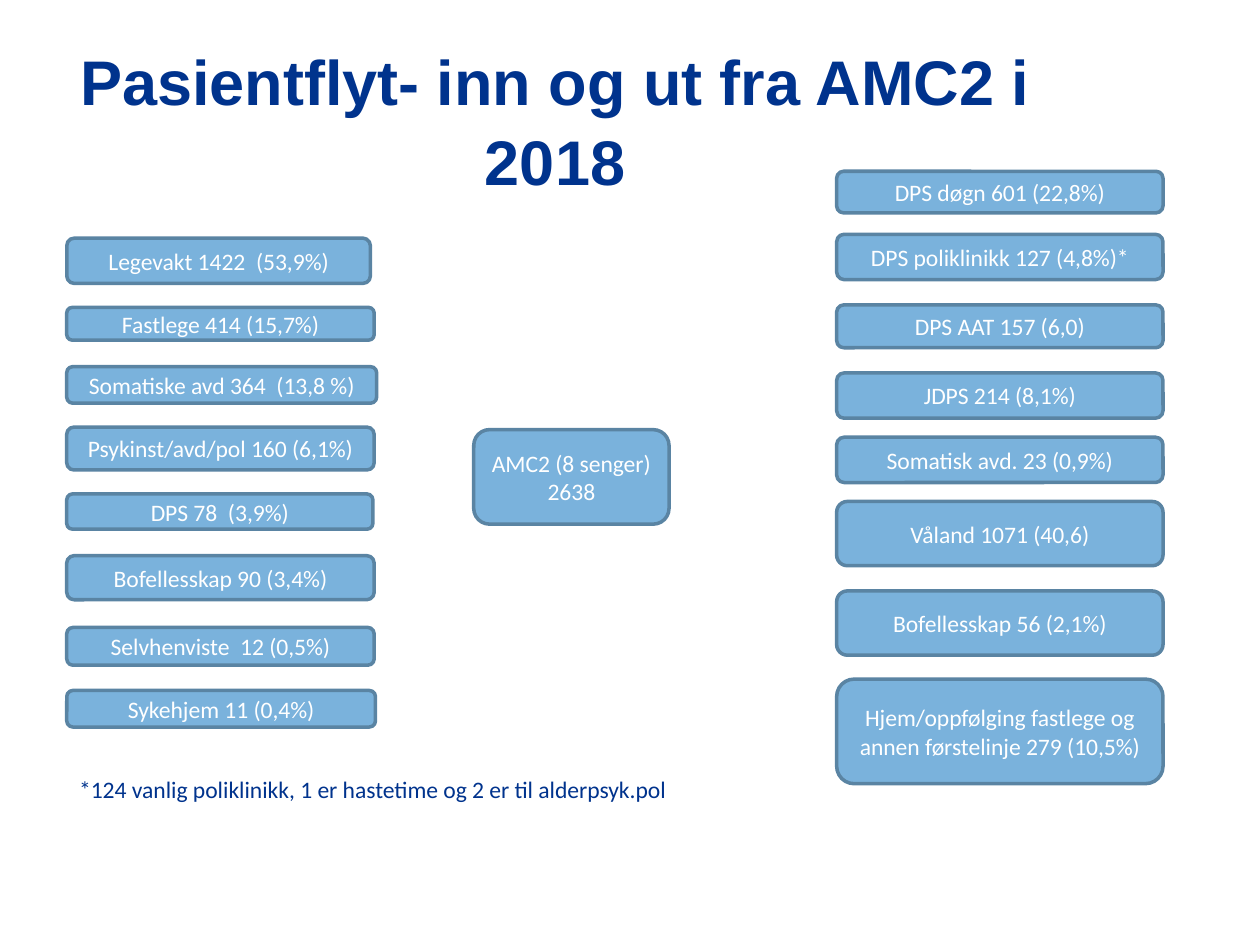
from pptx import Presentation
from pptx.dml.color import RGBColor
from pptx.enum.shapes import MSO_SHAPE
from pptx.enum.text import MSO_ANCHOR, PP_ALIGN
from pptx.util import Inches, Pt

ROUNDED = MSO_SHAPE.ROUNDED_RECTANGLE
CENTER, LEFT = PP_ALIGN.CENTER, PP_ALIGN.LEFT
MIDDLE, TOP = MSO_ANCHOR.MIDDLE, MSO_ANCHOR.TOP

# Grid of 100 columns by 75 rows
CELL = 0.1
SOURCE_COLUMN = 5.3
DESTINATION_COLUMN, DESTINATION_WIDTH = 66.4, 25.9

# Label, top row, columns wide, rows high
SOURCES = [
    ("Legevakt 1422  (53,9%)", 18.9, 24.1, 3.6),
    ("Fastlege 414 (15,7%)", 24.4, 24.4, 2.6),
    ("Somatiske avd 364  (13,8 %)", 29.1, 24.6, 2.9),
    ("Psykinst/avd/pol 160 (6,1%)", 33.9, 24.4, 3.4),
    ("DPS 78  (3,9%)", 39.2, 24.3, 2.8),
    ("Bofellesskap 90 (3,4%)", 44.1, 24.4, 3.5),
    ("Selvhenviste  12 (0,5%)", 49.8, 24.4, 3),
    ("Sykehjem 11 (0,4%)", 54.8, 24.5, 2.9),
]

# Label, top row, rows high
DESTINATIONS = [
    ("DPS døgn 601 (22,8%)", 13.6, 3.3),
    ("DPS poliklinikk 127 (4,8%)*", 18.6, 3.6),
    ("DPS AAT 157 (6,0)", 24.2, 3.4),
    ("JDPS 214 (8,1%)", 29.6, 3.6),
    ("Somatisk avd. 23 (0,9%)", 34.7, 3.6),
    ("Våland 1071 (40,6)", 39.8, 5.1),
    ("Bofellesskap 56 (2,1%)", 46.9, 5.1),
    ("Hjem/oppfølging fastlege og annen førstelinje 279 (10,5%)", 53.9, 8.3),
]


def color(value):
    return RGBColor.from_string(value)


class FlowSlide:
    navy, blue, edge, white = "00338D", "7AB2DC", "5A84A3", "FFFFFF"
    heading_font, body_font = "Arial", "Calibri"
    heading_size, body_size = 36, 13.5

    def __init__(self, presentation):
        self.slide = presentation.slides.add_slide(presentation.slide_layouts[6])

    def place(self, column, row, columns, rows):
        return [Inches(cells * CELL) for cells in (column, row, columns, rows)]

    def add_text(self, shape, text, ink, font, size, align, anchor, bold=False, wrap=True):
        frame = shape.text_frame
        frame.word_wrap = wrap
        frame.vertical_anchor = anchor
        paragraph = frame.paragraphs[0]
        paragraph.alignment = align
        run = paragraph.add_run()
        run.text = text
        run.font.name = font
        run.font.size = Pt(size)
        run.font.bold = bold
        run.font.color.rgb = color(ink)
        return paragraph

    def title(self, text, *cells):
        box = self.slide.shapes.add_textbox(*self.place(*cells))
        paragraph = self.add_text(box, text, self.navy, self.heading_font,
                                  self.heading_size, CENTER, TOP, bold=True)
        paragraph.line_spacing = 1.05

    def note(self, text, *cells):
        box = self.slide.shapes.add_textbox(*self.place(*cells))
        self.add_text(box, text, self.navy, self.body_font, self.body_size,
                      LEFT, TOP, wrap=False)

    def unit(self, text, *cells):
        shape = self.slide.shapes.add_shape(ROUNDED, *self.place(*cells))
        shape.shadow.inherit = False
        shape.fill.solid()
        shape.fill.fore_color.rgb = color(self.blue)
        shape.line.color.rgb = color(self.edge)
        shape.line.width = Pt(2)
        self.add_text(shape, text, self.white, self.body_font, self.body_size,
                      CENTER, MIDDLE)


def main():
    presentation = Presentation()
    presentation.slide_width = Inches(10)
    presentation.slide_height = Inches(7.5)
    flow = FlowSlide(presentation)

    # Title and central unit
    flow.title("Pasientflyt- inn og ut fra AMC2 i 2018", 4, 2.6, 80.1, 5)
    flow.unit("AMC2 (8 senger) 2638", 37.6, 34.1, 15.5, 7.5)

    # Where patients come from
    for label, row, columns, rows in SOURCES:
        flow.unit(label, SOURCE_COLUMN, row, columns, rows)

    # Where patients go
    for label, row, rows in DESTINATIONS:
        flow.unit(label, DESTINATION_COLUMN, row, DESTINATION_WIDTH, rows)

    # Footnote
    flow.note("*124 vanlig poliklinikk, 1 er hastetime og 2 er til alderpsyk.pol",
              SOURCE_COLUMN, 61, 49.4, 3.3)

    presentation.save("out.pptx")


if __name__ == "__main__":
    main()
